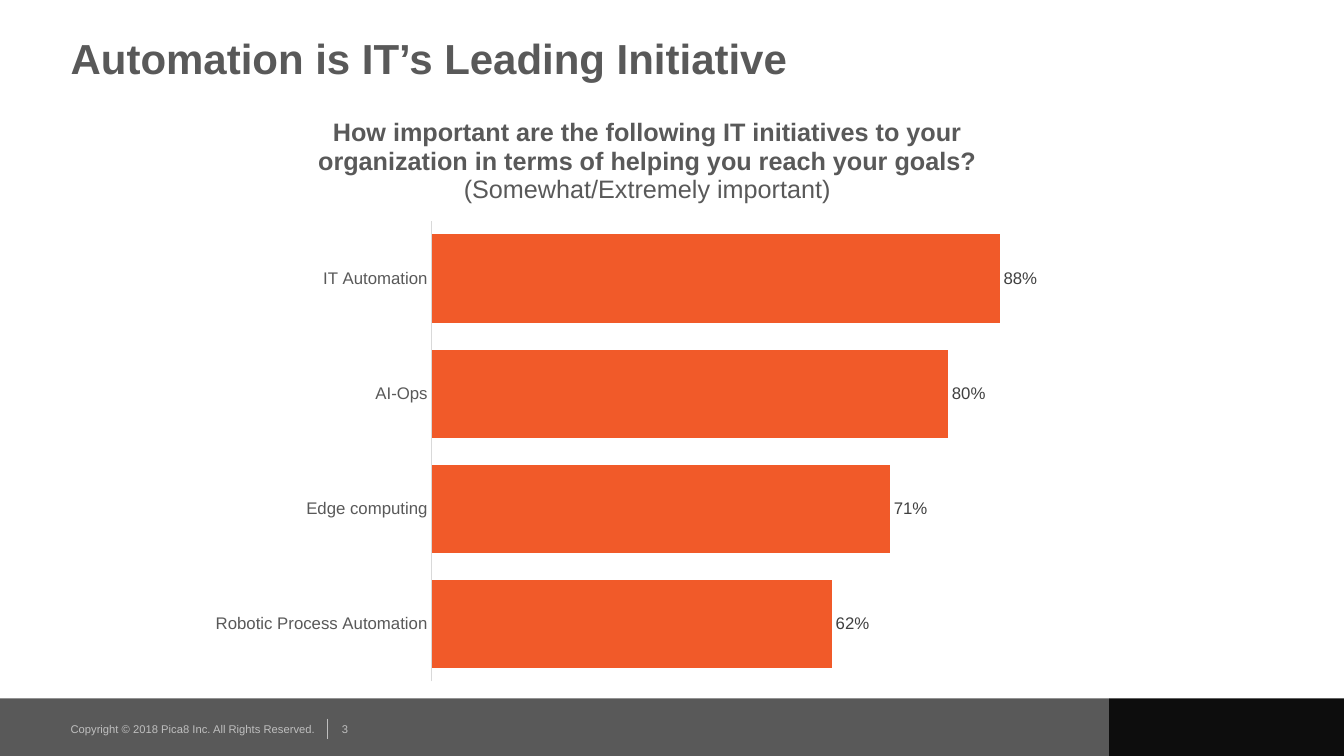
"""Build a slide with a bar chart of leading IT initiatives."""
from lxml import etree
from pptx import Presentation, util as u
from pptx.chart.data import CategoryChartData
from pptx.dml.color import RGBColor
from pptx.enum import chart as ch, shapes as sh, text as tx
from pptx.oxml import parse_xml
from pptx.oxml.ns import nsdecls, qn

HEAD = "Automation is IT’s Leading Initiative"
ASK = [
    ("How important are the following IT initiatives to your "
     "organization in terms of helping you reach your goals?", True),
    ("(Somewhat/Extremely important)", False),
]
BARS = [
    ("Robotic Process Automation", 0.62),
    ("Edge computing", 0.71),
    ("AI-Ops", 0.80),
    ("IT Automation", 0.88),
]
RIGHTS = "Copyright © 2018 Pica8 Inc. All Rights Reserved."
PAGE = "3"

GRAY = RGBColor(0x59, 0x59, 0x59)
DARK = RGBColor(0x0D, 0x0D, 0x0D)
PALE = RGBColor(0xBF, 0xBF, 0xBF)
RULE = RGBColor(0xD9, 0xD9, 0xD9)
INK = RGBColor(0x40, 0x40, 0x40)
FLAME = RGBColor(0xF1, 0x5A, 0x29)

WIDE, HIGH = 13.33, 7.5
EDGE = 0.7
FOOT = 6.93
SPLIT = 11


def box(*size):
    """Convert inches to lengths."""
    return [u.Inches(n) for n in size]


def style(font, color, size, bold=False):
    """Set the look of a font."""
    look = {"name": "Arial", "size": u.Pt(size), "bold": bold}
    for key, val in look.items():
        setattr(font, key, val)
    font.color.rgb = color


def write(shape, words, color, size, bold=False):
    """Fill a text frame that has no margins."""
    frame = shape.text_frame
    form = {"word_wrap": True, "vertical_anchor": tx.MSO_ANCHOR.MIDDLE,
            "auto_size": tx.MSO_AUTO_SIZE.NONE}
    form.update({"margin_" + side: 0
                 for side in ("left", "top", "right", "bottom")})
    for key, val in form.items():
        setattr(frame, key, val)
    frame.text = words
    line = frame.paragraphs[0]
    line.alignment = tx.PP_ALIGN.LEFT
    style(line.runs[0].font, color, size, bold)


def place(node, spot, **share):
    """Set a manual chart layout in shares of the chart."""
    for old in node.findall(qn("c:layout")):
        node.remove(old)
    aim = '<c:layoutTarget val="inner"/>' if "w" in share else ""
    modes = "".join(f'<c:{k}Mode val="edge"/>' for k in ("x", "y"))
    vals = "".join(f'<c:{k} val="{v}"/>' for k, v in share.items())
    node.insert(spot, parse_xml(
        f'<c:layout {nsdecls("c")}><c:manualLayout>{aim}{modes}{vals}'
        '</c:manualLayout></c:layout>'))


def footer(slide):
    """Draw the bands, the divider and the small print."""
    bands = [(0, SPLIT, GRAY), (SPLIT, WIDE - SPLIT, DARK)]
    for left, width, color in bands:
        band = slide.shapes.add_shape(
            sh.MSO_SHAPE.RECTANGLE, *box(left, FOOT, width, HIGH - FOOT))
        band.shadow.inherit = False
        band.fill.solid()
        band.fill.fore_color.rgb = color
        band.line.fill.background()
    bar = slide.shapes.add_connector(
        sh.MSO_CONNECTOR.STRAIGHT, *box(3.25, 7.13, 3.25, 7.33))
    bar.line.color.rgb = PALE
    bar.line.width = u.Pt(0.5)
    etree.SubElement(bar._element.spPr, qn("a:effectLst"))
    for words, left, width in [(RIGHTS, EDGE, 2.56), (PAGE, 3.39, 1.31)]:
        note = slide.shapes.add_textbox(*box(left, 7.1, width, 0.27))
        write(note, words, PALE, 8)


def graph(slide):
    """Add the bar chart with its question as title."""
    data = CategoryChartData(number_format="0%")
    data.categories = [name for name, _ in BARS]
    data.add_series("Series 1", [val for _, val in BARS])
    chart = slide.shapes.add_chart(
        ch.XL_CHART_TYPE.BAR_CLUSTERED, *box(1.97, 0.95, 8.89, 5.93),
        data).chart
    chart.has_legend = False
    style(chart.font, GRAY, 10)

    frame = chart.chart_title.text_frame
    for i, (words, bold) in enumerate(ASK):
        line = frame.add_paragraph() if i else frame.paragraphs[0]
        run = line.add_run()
        run.text = words
        style(run.font, GRAY, 18, bold)
    chart.chart_title.include_in_layout = False
    place(chart.chart_title._element, 1, x=0.13, y=0.03)
    place(chart._chartSpace.chart.plotArea, 0, x=0.26, y=0.21, w=0.72, h=0.77)

    axis = chart.category_axis
    axis.major_tick_mark = ch.XL_TICK_MARK.NONE
    axis.format.line.color.rgb = RULE
    axis.format.line.width = u.Pt(0.75)
    style(axis.tick_labels.font, GRAY, 12)
    scale = {"minimum_scale": 0, "maximum_scale": 1,
             "has_major_gridlines": False, "visible": False}
    for key, val in scale.items():
        setattr(chart.value_axis, key, val)

    plot = chart.plots[0]
    plot.gap_width = 30
    plot.vary_by_categories = False
    fill = plot.series[0].format.fill
    fill.solid()
    fill.fore_color.rgb = FLAME
    plot.has_data_labels = True
    tags = plot.data_labels
    form = {"show_value": True, "number_format": "0%",
            "number_format_is_linked": False,
            "position": ch.XL_LABEL_POSITION.OUTSIDE_END}
    for key, val in form.items():
        setattr(tags, key, val)
    style(tags.font, INK, 12)


def main():
    """Build and save the slide."""
    deck = Presentation()
    deck.slide_width, deck.slide_height = box(WIDE, HIGH)
    slide = deck.slides.add_slide(deck.slide_layouts[5])
    footer(slide)
    title = slide.shapes.title
    title.left, title.top, title.width, title.height = box(EDGE, 0.2, 12, 0.75)
    write(title, HEAD, GRAY, 30, True)
    graph(slide)
    deck.save("out.pptx")


if __name__ == "__main__":
    main()
